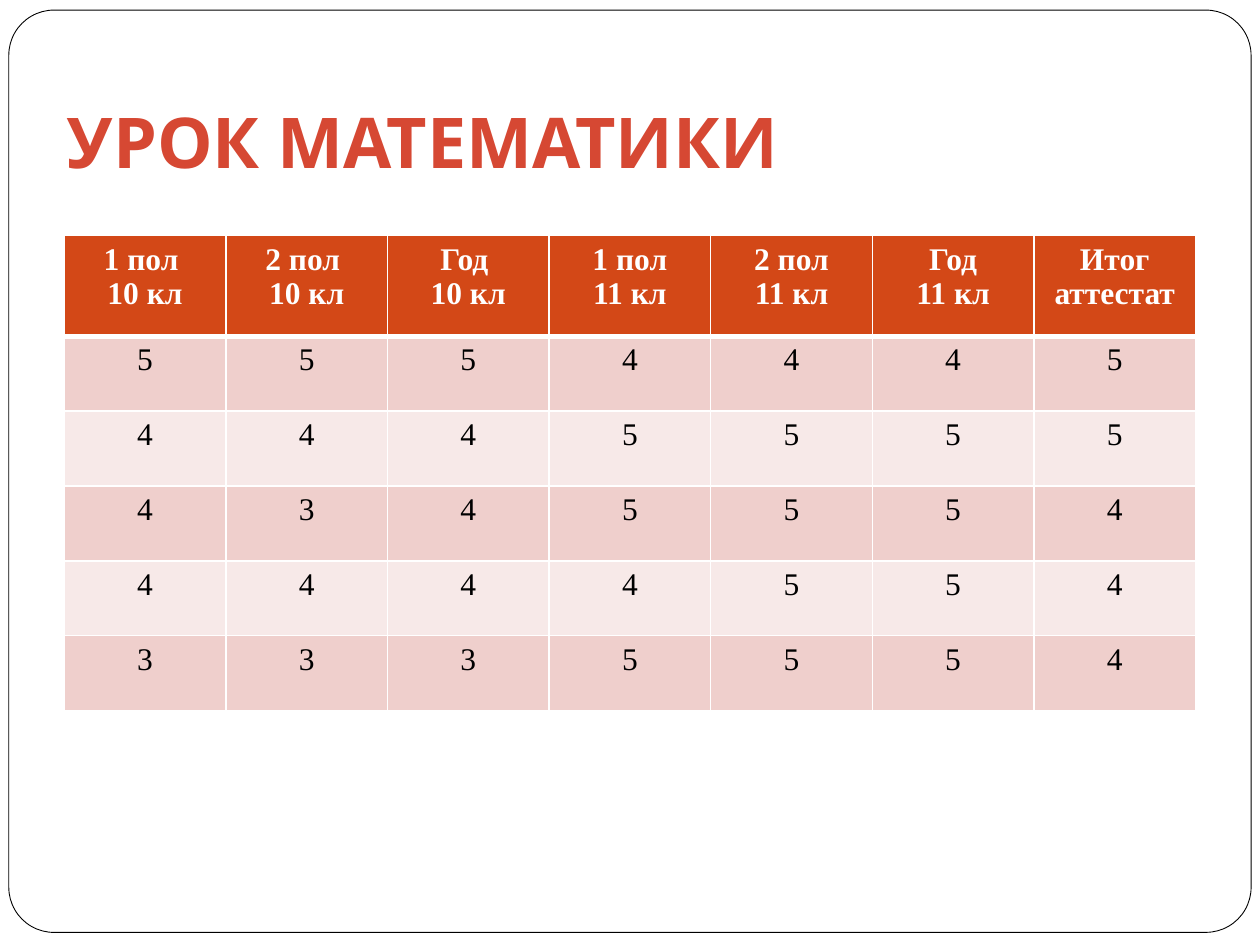
from lxml import etree
from pptx import Presentation
from pptx.dml.color import RGBColor
from pptx.enum.shapes import MSO_SHAPE
from pptx.enum.text import MSO_ANCHOR, MSO_AUTO_SIZE, PP_ALIGN
from pptx.oxml.ns import qn
from pptx.util import Inches, Pt

ROUNDED = MSO_SHAPE.ROUNDED_RECTANGLE
BOTTOM = MSO_ANCHOR.BOTTOM
NO_FIT = MSO_AUTO_SIZE.NONE
LEFT, CENTER = PP_ALIGN.LEFT, PP_ALIGN.CENTER

TITLE = "УРОК МАТЕМАТИКИ"
HEADERS = ["1 пол \v10 кл", "2 пол \v10 кл", "Год \v10 кл",
           "1 пол\n11 кл", "2 пол\n11 кл", "Год\n11 кл", "Итог аттестат"]
GRADES = ["5554445", "4445555", "4345554", "4444554", "3335554"]

WHITE, BLACK = "FFFFFF", "000000"
HEADER_FILL = "D34817"
BANDS = ["EFCFCC", "F7E9E8"]
TITLE_FONT = {"name": "Karla", "size": Pt(40), "bold": True}
HEADER_FONT = {"name": "Times New Roman", "size": Pt(18), "bold": True}
GRADE_FONT = {**HEADER_FONT, "bold": False}
TITLE_FRAME = {"word_wrap": True, "auto_size": NO_FIT, "vertical_anchor": BOTTOM,
               "margin_left": Inches(0.1), "margin_right": Inches(0.1),
               "margin_top": Inches(0.05), "margin_bottom": Inches(0.1)}
FRAME_AT = (0.07, 0.08, 9.86, 7.32)
TITLE_AT = (0.43, 0.3, 9.07, 1.25)
TABLE_AT = (0.51, 1.87, 8.98, 3.77)
HEADER_HEIGHT = 0.8


def color(value):
    """Turn a hex string into a colour."""
    return RGBColor.from_string(value)


def apply(target, values):
    """Set each named attribute of the target."""
    for name, value in values.items():
        setattr(target, name, value)


def format_text(frame, font, ink, align):
    """Format every paragraph and run of a text frame."""
    for para in frame.paragraphs:
        para.alignment = align
        for span in para.runs:
            apply(span.font, font)
            span.font.color.rgb = color(ink)


def add_borders(cell, widths):
    """Draw white cell borders with the given widths in points."""
    properties = cell._tc.get_or_add_tcPr()
    for side, width in widths.items():
        line = etree.SubElement(properties, qn(f"a:ln{side}"), w=str(Pt(width)))
        fill = etree.SubElement(line, qn("a:solidFill"))
        etree.SubElement(fill, qn("a:srgbClr"), val=WHITE)


def add_frame(slide):
    """Place the rounded page frame behind everything else."""
    frame = slide.shapes.add_shape(ROUNDED, *map(Inches, FRAME_AT))
    frame.adjustments[0] = 0.049
    frame.shadow.inherit = False
    frame.fill.solid()
    frame.fill.fore_color.rgb = color(WHITE)
    frame.line.color.rgb = color(BLACK)
    frame.line.width = Pt(0.5)
    slide.shapes._spTree.insert(2, frame._element)


def fill_title(slide):
    """Move, fill and format the title placeholder."""
    title = slide.shapes.title
    apply(title, dict(zip(("left", "top", "width", "height"), map(Inches, TITLE_AT))))
    title.text_frame.text = TITLE
    apply(title.text_frame, TITLE_FRAME)
    format_text(title.text_frame, TITLE_FONT, "D64833", LEFT)


def add_grades(slide):
    """Build the banded table of grades."""
    rows = [HEADERS, *GRADES]
    width, height = TABLE_AT[2:]
    table = slide.shapes.add_table(len(rows), len(HEADERS), *map(Inches, TABLE_AT)).table
    for column in table.columns:
        column.width = Inches(width / len(HEADERS))
    for index, texts in enumerate(rows):
        is_header = index == 0
        row_height = HEADER_HEIGHT if is_header else (height - HEADER_HEIGHT) / len(GRADES)
        table.rows[index].height = Inches(row_height)
        font, ink = (HEADER_FONT, WHITE) if is_header else (GRADE_FONT, BLACK)
        widths = {"L": 1, "R": 1, "T": 3 if index == 1 else 1, "B": 3 if is_header else 1}
        for position, text in enumerate(texts):
            cell = table.cell(index, position)
            cell.text = text
            format_text(cell.text_frame, font, ink, CENTER)
            add_borders(cell, widths)
            cell.fill.solid()
            cell.fill.fore_color.rgb = color(HEADER_FILL if is_header else BANDS[(index - 1) % 2])


def main():
    """Build and save the slide."""
    deck = Presentation()
    deck.slide_width, deck.slide_height = Inches(10), Inches(7.5)
    slide = deck.slides.add_slide(deck.slide_layouts[5])
    add_frame(slide)
    fill_title(slide)
    add_grades(slide)
    deck.save("out.pptx")


if __name__ == "__main__":
    main()
